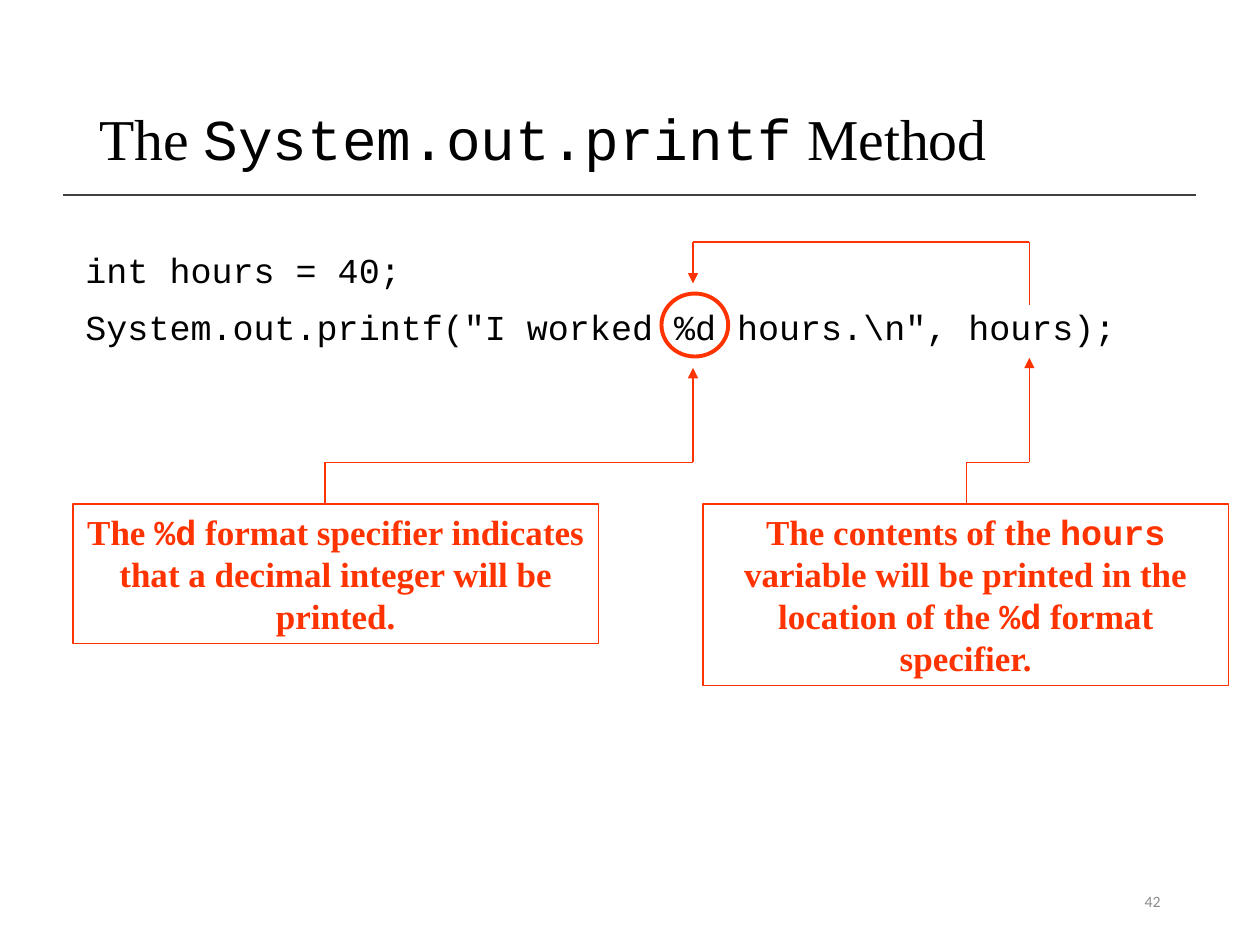
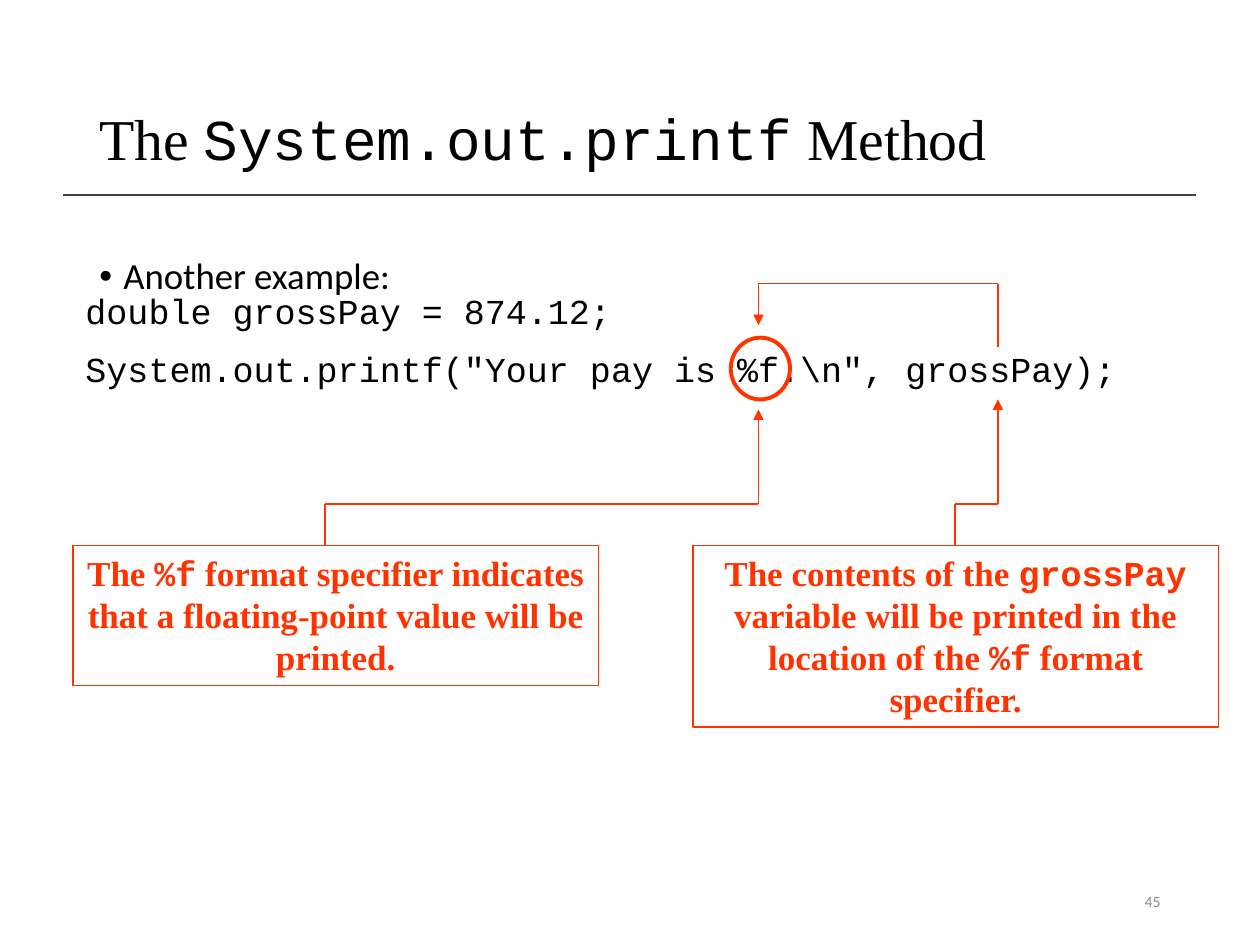
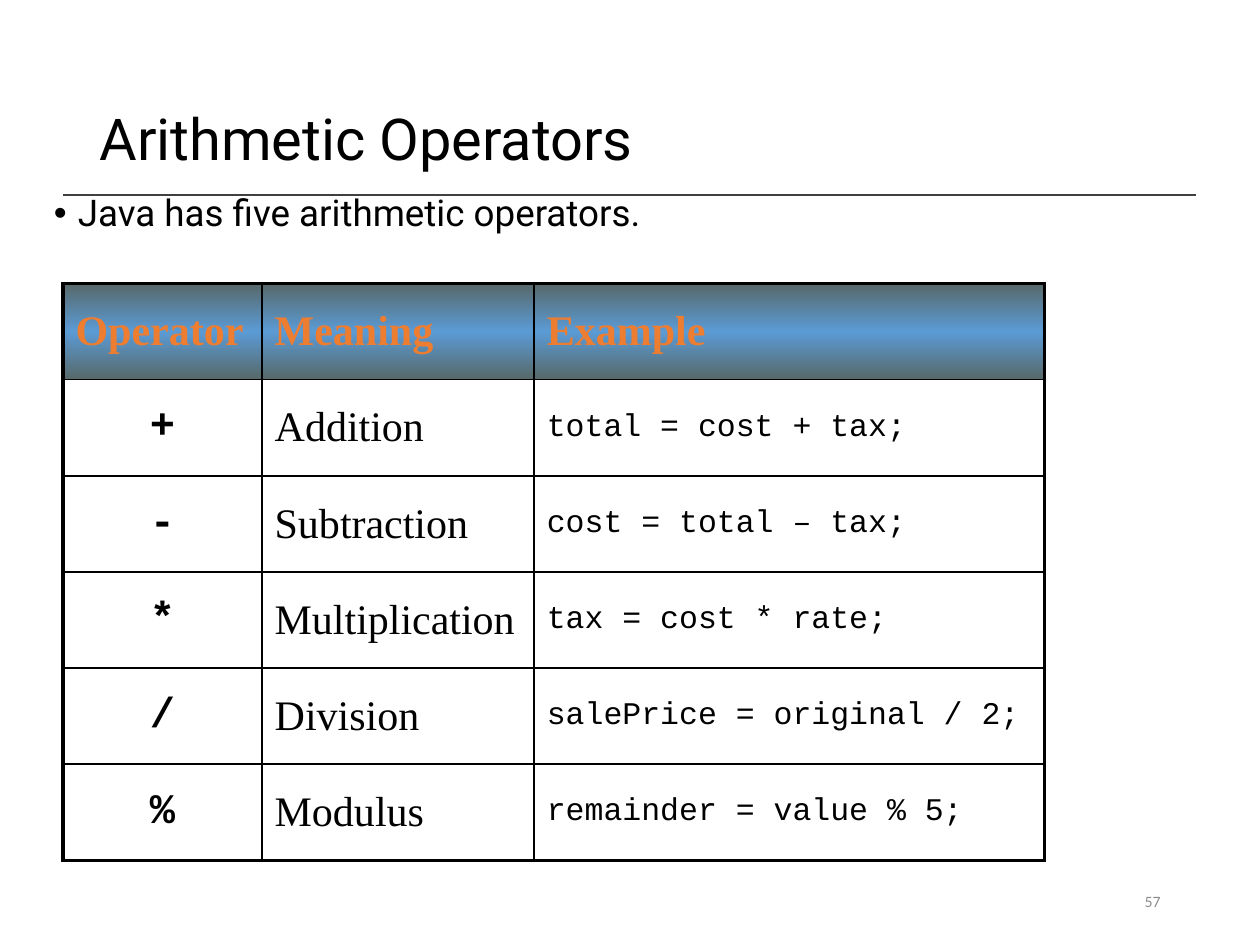
from itertools import pairwise

from lxml import etree
from pptx import Presentation
from pptx import util as u
from pptx.dml.color import RGBColor
from pptx.enum import shapes, text
from pptx.oxml import ns

BLACK = RGBColor(0x00, 0x00, 0x00)
RULE_GREY = RGBColor(0x40, 0x40, 0x40)
NUMBER_GREY = RGBColor(0x8C, 0x8C, 0x8C)
ACCENT = RGBColor(0xFF, 0x33, 0x00)
HEADER_TEXT = RGBColor(0xED, 0x7D, 0x31)
HEADER_EDGE = RGBColor(0x57, 0x68, 0x69)
HEADER_MIDDLE = RGBColor(0x5B, 0x9B, 0xD5)

SERIF, MONO, SANS, ROBOTO = "Times New Roman", "Courier New", "Calibri", "Roboto"

PRINTF_TITLE = "The `System.out.printf` Method"
PRINTF_SLIDES = [
    {
        "number": 42,
        "top": 1.92,
        "bullet": None,
        "code": ["int hours = 40;",
                 'System.out.printf("I worked %d hours.\\n", hours);'],
        "ring": (5.25, 2.33, 0.53, 0.5),
        "specifier_x": 5.5,
        "variable_x": 8.17,
        "notes": [
            (0.58, 1.11, 2.58, "The `%d` format specifier indicates that a "
                               "decimal integer will be printed."),
            (5.58, 1.44, 7.67, "The contents of the `hours` variable will be "
                               "printed in the location of the `%d` format specifier."),
        ],
    },
    {
        "number": 45,
        "top": 2.25,
        "bullet": "Another example:",
        "code": ["double grossPay = 874.12;",
                 'System.out.printf("Your pay is %f.\\n", grossPay);'],
        "ring": (5.8, 2.68, 0.47, 0.49),
        "specifier_x": 6.02,
        "variable_x": 7.92,
        "notes": [
            (0.58, 1.11, 2.58, "The `%f` format specifier indicates that a "
                               "floating-point value will be printed."),
            (5.5, 1.44, 7.58, "The contents of the `grossPay` variable will be "
                              "printed in the location of the `%f` format specifier."),
        ],
    },
]

OPERATORS = [
    ("Operator", "Meaning", "Example"),
    ("+", "Addition", "total = cost + tax;"),
    ("-", "Subtraction", "cost = total – tax;"),
    ("*", "Multiplication", "tax = cost * rate;"),
    ("/", "Division", "salePrice = original / 2;"),
    ("%", "Modulus", "remainder = value % 5;"),
]
OPERATOR_COLUMNS = (1.58, 2.16, 4.05)
OPERATOR_ROW = 4.58 / len(OPERATORS)

TITLE = {"size": 33, "font": SERIF, "line_spacing": 0.9}
CODE = {"size": 20, "font": MONO, "space_before": u.Pt(4.5), "space_after": u.Pt(4.5)}
NOTE = {"size": 20, "font": SERIF, "color": ACCENT, "bold": True,
        "alignment": text.PP_ALIGN.CENTER}
BULLET = {"size": 21, "font": SANS, "line_spacing": 0.9, "space_before": u.Pt(7.5)}
NUMBER = {"size": 9, "font": SANS, "color": NUMBER_GREY, "alignment": text.PP_ALIGN.RIGHT}
HEADER_CELL = {"size": 24, "font": SERIF, "color": HEADER_TEXT, "bold": True}
COLUMN_CELLS = (
    {"size": 24, "font": MONO, "bold": True, "alignment": text.PP_ALIGN.CENTER},
    {"size": 24, "font": SERIF},
    {"size": 18, "font": MONO},
)
PARAGRAPH_KEYS = ("alignment", "line_spacing", "space_before", "space_after")


def add_xml(parent, tag, **attributes):
    return etree.SubElement(parent, ns.qn(tag), attributes)


def write(frame, lines, style, anchor=text.MSO_ANCHOR.TOP):
    frame.word_wrap = True
    frame.vertical_anchor = anchor
    for index, line in enumerate(lines):
        para = frame.add_paragraph() if index else frame.paragraphs[0]
        for key in PARAGRAPH_KEYS:
            if key in style:
                setattr(para, key, style[key])
        for part, words in enumerate(line.split("`")):
            if words:
                span = para.add_run()
                span.text = words
                values = {"size": u.Pt(style["size"]),
                          "name": MONO if part % 2 else style["font"],
                          "bold": style.get("bold", False)}
                for key, value in values.items():
                    setattr(span.font, key, value)
                span.font.color.rgb = style.get("color", BLACK)


def add_text(page, place, lines, style, anchor=text.MSO_ANCHOR.TOP):
    box = page.shapes.add_textbox(*map(u.Inches, place))
    write(box.text_frame, lines, style, anchor)
    return box


def add_bullet(page, place, line, font):
    box = add_text(page, place, [line], BULLET | {"font": font})
    settings = box.text_frame.paragraphs[0]._p.get_or_add_pPr()
    settings.set("marL", str(u.Inches(0.19)))
    settings.set("indent", str(u.Inches(-0.19)))
    add_xml(settings, "a:buFont", typeface="Arial")
    add_xml(settings, "a:buChar", char="•")


def add_outline(page, kind, place, width):
    shape = page.shapes.add_shape(kind, *map(u.Inches, place))
    shape.shadow.inherit = False
    shape.fill.background()
    shape.line.color.rgb = ACCENT
    shape.line.width = u.Pt(width)
    return shape


def add_line(page, start, end, color, width, arrow=False):
    line = page.shapes.add_connector(shapes.MSO_CONNECTOR.STRAIGHT,
                                     *map(u.Inches, start + end))
    line.line.color.rgb = color
    line.line.width = u.Pt(width)
    if arrow:
        add_xml(line.line._get_or_add_ln(), "a:tailEnd", type="triangle")
    add_xml(line._element.spPr, "a:effectLst")


def add_elbow(page, start, level, end):
    points = [start, (start[0], level), (end[0], level), end]
    for first, last in pairwise(points):
        add_line(page, first, last, ACCENT, 0.75, arrow=last == end)


def add_page(deck, title, number, font=SERIF):
    page = deck.slides.add_slide(deck.slide_layouts[6])
    middle = text.MSO_ANCHOR.MIDDLE
    add_line(page, (0.5, 1.55), (9.49, 1.55), RULE_GREY, 1)
    add_text(page, (0.69, 0.4, 8.62, 1.45), [title], TITLE | {"font": font}, middle)
    add_text(page, (7.06, 6.95, 2.25, 0.4), [str(number)], NUMBER, middle)
    return page


def add_printf_page(deck, content):
    page = add_page(deck, PRINTF_TITLE, content["number"])
    top = content["top"]
    specifier_x, variable_x = content["specifier_x"], content["variable_x"]
    elbow_level, note_top = top + 1.75, top + 2.08
    if content["bullet"]:
        add_bullet(page, (0.69, 2, 8.62, 4.76), content["bullet"], SANS)
    add_text(page, (0.58, top, 9.08, 0.97), content["code"], CODE)
    add_outline(page, shapes.MSO_SHAPE.OVAL, content["ring"], 2.25)
    add_elbow(page, (variable_x, top + 0.5), top, (specifier_x, top + 0.33))
    targets = [(specifier_x, top + 1), (variable_x, top + 0.92)]
    for (left, height, stem_x, words), target in zip(content["notes"], targets):
        note = add_outline(page, shapes.MSO_SHAPE.RECTANGLE,
                           (left, note_top, 4.17, height), 0.75)
        write(note.text_frame, [words], NOTE)
        add_elbow(page, (stem_x, note_top), elbow_level, target)


def set_borders(cell, heavy_sides):
    settings = cell._tc.get_or_add_tcPr()
    for side in "LRTB":
        width = u.Pt(2.25 if side in heavy_sides else 1)
        border = add_xml(settings, f"a:ln{side}", w=str(width))
        add_xml(add_xml(border, "a:solidFill"), "a:srgbClr", val=str(BLACK))


def set_header_fill(cell):
    gradient = add_xml(cell._tc.get_or_add_tcPr(), "a:gradFill")
    stops = add_xml(gradient, "a:gsLst")
    for percent, color in ((0, HEADER_EDGE), (50, HEADER_MIDDLE), (100, HEADER_EDGE)):
        stop = add_xml(stops, "a:gs", pos=str(percent * 1000))
        add_xml(stop, "a:srgbClr", val=str(color))
    add_xml(gradient, "a:lin", ang=str(90 * 60000), scaled="0")


def add_operator_page(deck):
    page = add_page(deck, "Arithmetic Operators", 57, ROBOTO)
    add_bullet(page, (0.33, 1.5, 9.07, 5), "Java has five arithmetic operators.", ROBOTO)
    last_row, last_column = len(OPERATORS) - 1, len(OPERATOR_COLUMNS) - 1
    place = (0.5, 2.25, sum(OPERATOR_COLUMNS), OPERATOR_ROW * len(OPERATORS))
    table = page.shapes.add_table(len(OPERATORS), len(OPERATOR_COLUMNS),
                                  *map(u.Inches, place)).table
    table.first_row = table.horz_banding = False
    for column, width in zip(table.columns, OPERATOR_COLUMNS):
        column.width = u.Inches(width)
    for row, words in enumerate(OPERATORS):
        table.rows[row].height = u.Inches(OPERATOR_ROW)
        for column, word in enumerate(words):
            cell = table.cell(row, column)
            style = COLUMN_CELLS[column] if row else HEADER_CELL
            write(cell.text_frame, [word], style)
            cell.vertical_anchor = text.MSO_ANCHOR.MIDDLE
            edges = {"L": column == 0, "R": column == last_column,
                     "T": row == 0, "B": row == last_row}
            set_borders(cell, [side for side, heavy in edges.items() if heavy])
            if row:
                cell.fill.background()
            else:
                set_header_fill(cell)


def main():
    deck = Presentation()
    deck.slide_width, deck.slide_height = u.Inches(10), u.Inches(7.5)
    for content in PRINTF_SLIDES:
        add_printf_page(deck, content)
    add_operator_page(deck)
    deck.save("out.pptx")


if __name__ == "__main__":
    main()
